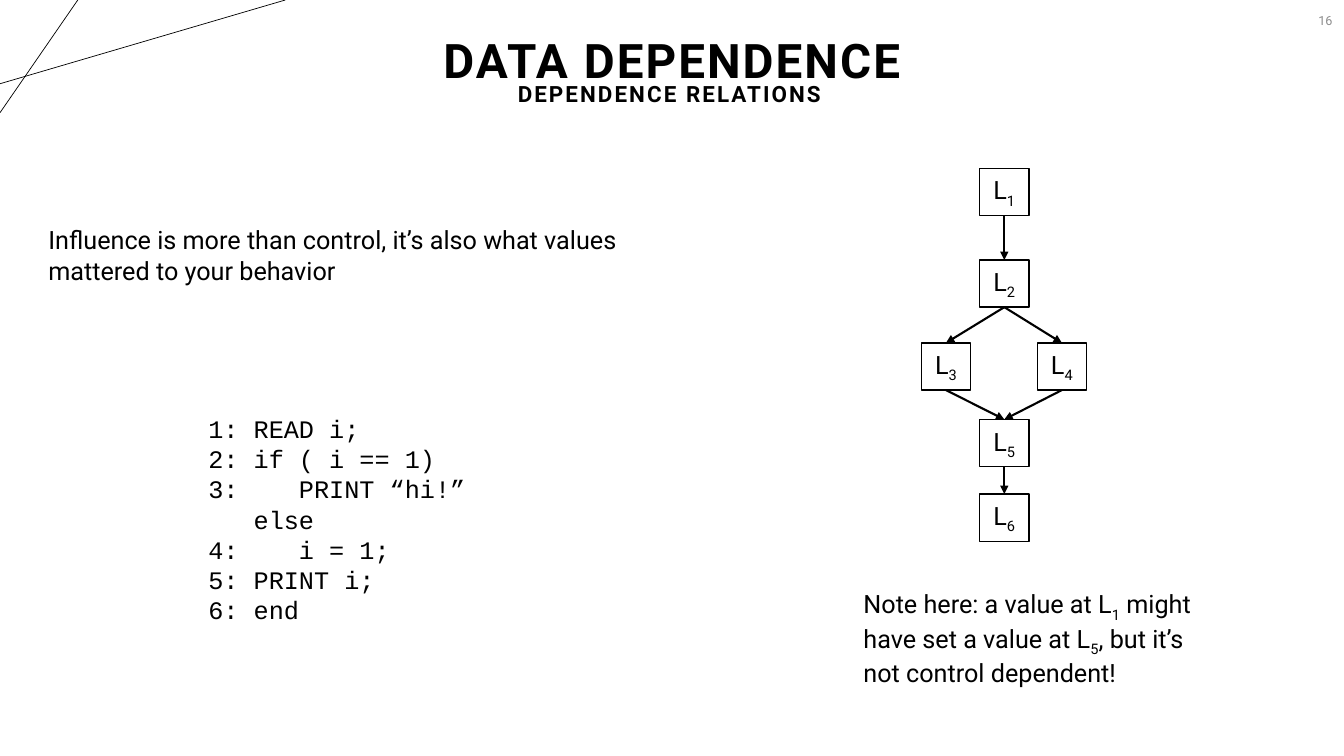
"""Build the data dependence slide with its listing and control-flow graph."""
from dataclasses import dataclass

from lxml.etree import SubElement
from pptx import Presentation
from pptx.dml.color import RGBColor
from pptx.enum.shapes import MSO_CONNECTOR, MSO_SHAPE
from pptx.enum.text import MSO_ANCHOR, PP_ALIGN
from pptx.oxml.ns import qn
from pptx.util import Cm, Pt


@dataclass(frozen=True)
class Theme:
    """Fonts, colours, type sizes and line widths."""
    sans: str = "Roboto"
    mono: str = "Courier New"
    ink: RGBColor = RGBColor(0x00, 0x00, 0x00)
    paper: RGBColor = RGBColor(0xFF, 0xFF, 0xFF)
    muted: RGBColor = RGBColor(0x8C, 0x8C, 0x8C)
    title: Pt = Pt(34)
    subtitle: Pt = Pt(16)
    body: Pt = Pt(18)
    number: Pt = Pt(9)
    hairline: Pt = Pt(0.5)
    outline: Pt = Pt(1)
    arrow: Pt = Pt(1.5)


THEME = Theme()
BOX_W, BOX_H = 1.24, 1.19
NODES = {
    1: (25.31, 4.24),
    2: (25.31, 6.55),
    3: (23.84, 8.64),
    4: (26.76, 8.64),
    5: (25.31, 10.57),
    6: (25.31, 12.45),
}
EDGES = [(1, 2), (2, 3), (2, 4), (3, 5), (4, 5), (5, 6)]
CODE = """1: READ i;
2: if ( i == 1)
3:    PRINT “hi!”
   else
4:    i = 1;
5: PRINT i;
6: end"""


def add_runs(p, text):
    """Add text to a paragraph, lowering the character after each underscore."""
    first, *rest = text.split("_")
    p.add_run().text = first
    for part in rest:
        r = p.add_run()
        r.text = part[0]
        r._r.get_or_add_rPr().set("baseline", "-25000")
        if part[1:]:
            p.add_run().text = part[1:]


def fill_text(tf, text, size=THEME.body, font=THEME.sans, color=THEME.ink,
              align=PP_ALIGN.LEFT, anchor=MSO_ANCHOR.TOP):
    """Write one paragraph per line of text with a shared format."""
    tf.word_wrap = True
    tf.vertical_anchor = anchor
    for i, line in enumerate(text.split("\n")):
        p = tf.add_paragraph() if i else tf.paragraphs[0]
        p.alignment = align
        p.font.name, p.font.size = font, size
        p.font.color.rgb = color
        add_runs(p, line)


def add_text(s, box, text, **style):
    """Add a text box at left, top, width and height in centimetres."""
    sp = s.shapes.add_textbox(*map(Cm, box))
    fill_text(sp.text_frame, text, **style)
    return sp


def style_heading(sp):
    """Make a heading bold, tightly leaded and widely tracked."""
    p = sp.text_frame.paragraphs[0]
    p.font.bold = True
    p.line_spacing = 0.9
    for r in p.runs:
        r._r.get_or_add_rPr().set("spc", "150")


def add_title(s, box, text):
    """Place and format the title placeholder."""
    sp = s.shapes.title
    sp.left, sp.top, sp.width, sp.height = map(Cm, box)
    fill_text(sp.text_frame, text, size=THEME.title,
              align=PP_ALIGN.CENTER, anchor=MSO_ANCHOR.MIDDLE)
    style_heading(sp)


def add_line(s, start, end, width):
    """Add a straight line without a shadow."""
    sp = s.shapes.add_connector(MSO_CONNECTOR.STRAIGHT,
                                *map(Cm, (*start, *end)))
    sp.line.color.rgb = THEME.ink
    sp.line.width = width
    SubElement(sp._element.spPr, qn("a:effectLst"))
    return sp


def add_node(s, number, center, top):
    """Add the box of one program line."""
    sp = s.shapes.add_shape(MSO_SHAPE.RECTANGLE, Cm(center - BOX_W / 2),
                            Cm(top), Cm(BOX_W), Cm(BOX_H))
    sp.shadow.inherit = False
    sp.fill.solid()
    sp.fill.fore_color.rgb = THEME.paper
    sp.line.color.rgb = THEME.ink
    sp.line.width = THEME.outline
    fill_text(sp.text_frame, f"L_{number}", align=PP_ALIGN.CENTER,
              anchor=MSO_ANCHOR.MIDDLE)
    return sp


def add_edge(s, source, target):
    """Join the bottom of one box to the top of another with an arrow."""
    sp = add_line(s, (0, 0), (0, 0), THEME.arrow)
    sp.begin_connect(source, 2)
    sp.end_connect(target, 0)
    SubElement(sp.line._get_or_add_ln(), qn("a:tailEnd"), type="triangle")


def add_graph(s):
    """Draw the control-flow graph."""
    boxes = {n: add_node(s, n, *place) for n, place in NODES.items()}
    for source, target in EDGES:
        add_edge(s, boxes[source], boxes[target])


def main():
    """Build and save the slide."""
    prs = Presentation()
    prs.slide_width, prs.slide_height = Cm(33.87), Cm(19.05)
    s = prs.slides.add_slide(prs.slide_layouts[5])

    add_line(s, (0, 2.11), (7.19, 0), THEME.hairline)
    add_line(s, (1.96, 0), (0, 2.84), THEME.hairline)
    add_text(s, (26.21, 0, 7.62, 1.02), "16", size=THEME.number,
             color=THEME.muted, align=PP_ALIGN.RIGHT, anchor=MSO_ANCHOR.MIDDLE)
    add_title(s, (0.03, -0.25, 33.81, 3.68), "DATA DEPENDENCE")
    style_heading(add_text(
        s, (-0.03, 0.56, 33.81, 3.68), "DEPENDENCE RELATIONS",
        size=THEME.subtitle, align=PP_ALIGN.CENTER, anchor=MSO_ANCHOR.MIDDLE))

    add_text(s, (5, 10.29, 8.89, 5.64), CODE, font=THEME.mono)
    add_text(s, (0.97, 5.54, 16.94, 1.8),
             "Influence is more than control, it’s also what values "
             "mattered to your behavior")
    add_text(s, (21.51, 14.71, 9.4, 2.57),
             "Note here: a value at L_1 might have set a value at L_5, "
             "but it’s not control dependent!")
    add_graph(s)
    prs.save("out.pptx")


if __name__ == "__main__":
    main()
